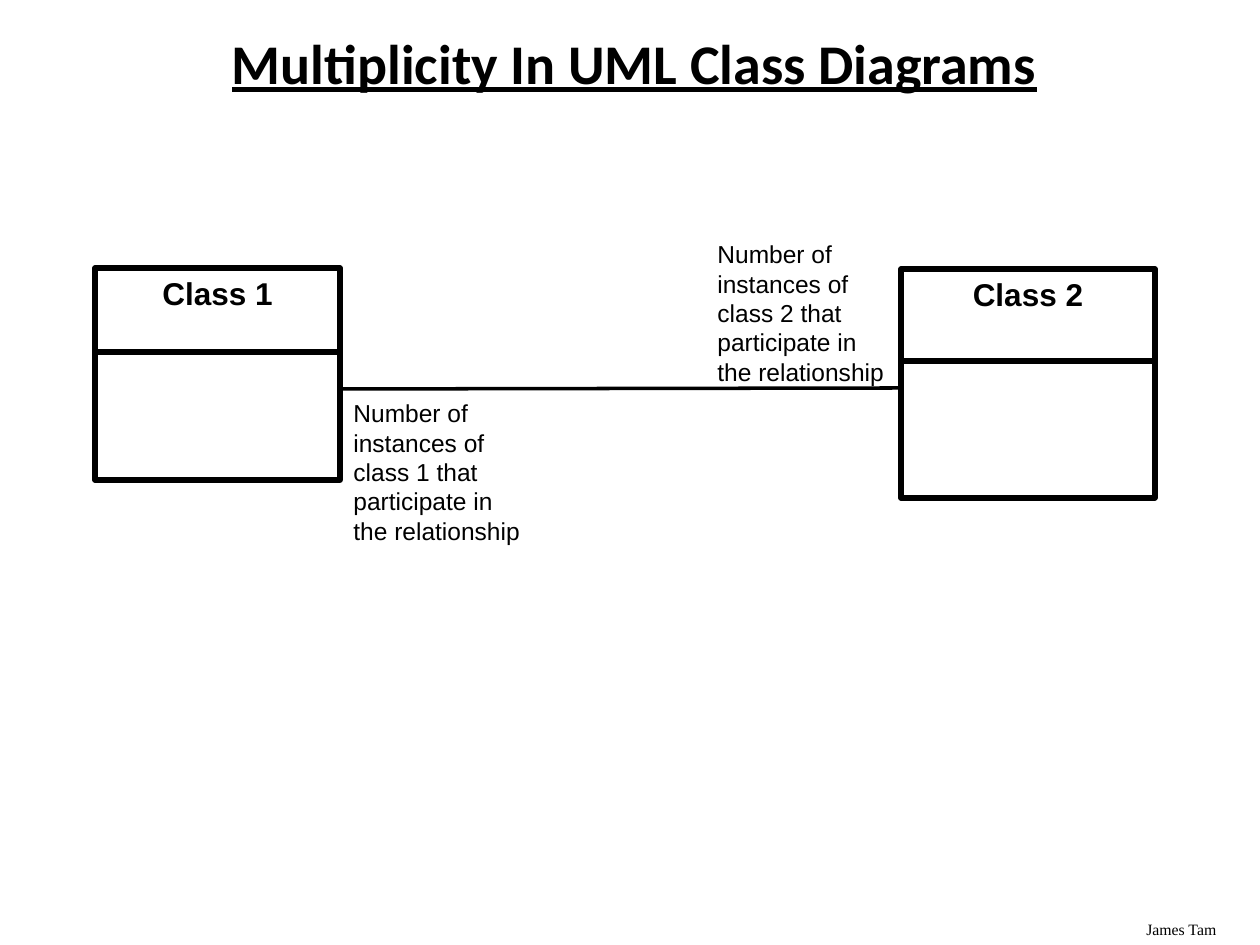
from lxml.etree import SubElement
from pptx import Presentation
from pptx.dml.color import RGBColor
from pptx.enum.shapes import MSO_CONNECTOR, MSO_SHAPE
from pptx.enum.text import MSO_ANCHOR, PP_ALIGN
from pptx.oxml.ns import qn
from pptx.util import Pt

PX = 914400 / 126
BLACK = "000000"

# Content, with places in px
TITLE = ("Multiplicity In UML Class Diagrams", (99, 6, 1071, 120))
CLASSES = [  # name, box, y of divider
    ("Class 1", (95, 268, 245, 212), 352),
    ("Class 2", (901, 269, 254, 229), 361),
]
ASSOCIATION = (341, 389, 902, 388)
LABELS = [
    ("Number of instances of class 1 that participate in the relationship", (341, 392)),
    ("Number of instances of class 2 that participate in the relationship", (705, 233)),
]
LABEL_SIZE = (193, 159)
NAME_HEIGHT = 50
AUTHOR = ("James Tam", (1134, 914, 126, 32))


def px(*values):
    return [round(v * PX) for v in values]


def rgb(color):
    return RGBColor.from_string(color)


def write(tf, text, size, font="Arial", bold=False, align=PP_ALIGN.LEFT):
    tf.word_wrap = True
    p = tf.paragraphs[0]
    p.alignment = align
    r = p.add_run()
    r.text = text
    r.font.size = Pt(size)
    r.font.name = font
    r.font.bold = bold
    r.font.color.rgb = rgb(BLACK)
    return p, r


def add_text(shapes, box, text, size, **style):
    sp = shapes.add_textbox(*px(*box))
    write(sp.text_frame, text, size, **style)


def add_line(shapes, ends, width):
    line = shapes.add_connector(MSO_CONNECTOR.STRAIGHT, *px(*ends))
    line.line.color.rgb = rgb(BLACK)
    line.line.width = Pt(width)
    SubElement(line._element.spPr, qn("a:effectLst"))


def add_class(shapes, name, box, divider):
    x, y, w, h = box
    group = shapes.add_group_shape().shapes
    sp = group.add_shape(MSO_SHAPE.RECTANGLE, *px(*box))
    sp.shadow.inherit = False
    sp.fill.background()
    sp.line.color.rgb = rgb(BLACK)
    sp.line.width = Pt(3)
    add_text(group, (x, y, w, NAME_HEIGHT), name, 18, bold=True, align=PP_ALIGN.CENTER)
    add_line(group, (x, divider, x + w, divider), 3)


prs = Presentation()
prs.slide_width, prs.slide_height = px(1260, 945)
s = prs.slides.add_slide(prs.slide_layouts[5])  # title only

# Title
text, box = TITLE
title = s.shapes.title
title.left, title.top, title.width, title.height = px(*box)
title.text_frame.vertical_anchor = MSO_ANCHOR.MIDDLE
p, r = write(title.text_frame, text, 32, "Calibri", True, PP_ALIGN.CENTER)
p.line_spacing = 0.9
r.font.underline = True

# Classes and the association between them
for name, box, divider in CLASSES:
    add_class(s.shapes, name, box, divider)
add_line(s.shapes, ASSOCIATION, 2)

# Multiplicity labels
for text, corner in LABELS:
    add_text(s.shapes, corner + LABEL_SIZE, text, 14)

# Author
text, box = AUTHOR
add_text(s.shapes, box, text, 9, font="Times New Roman")

prs.save("out.pptx")
